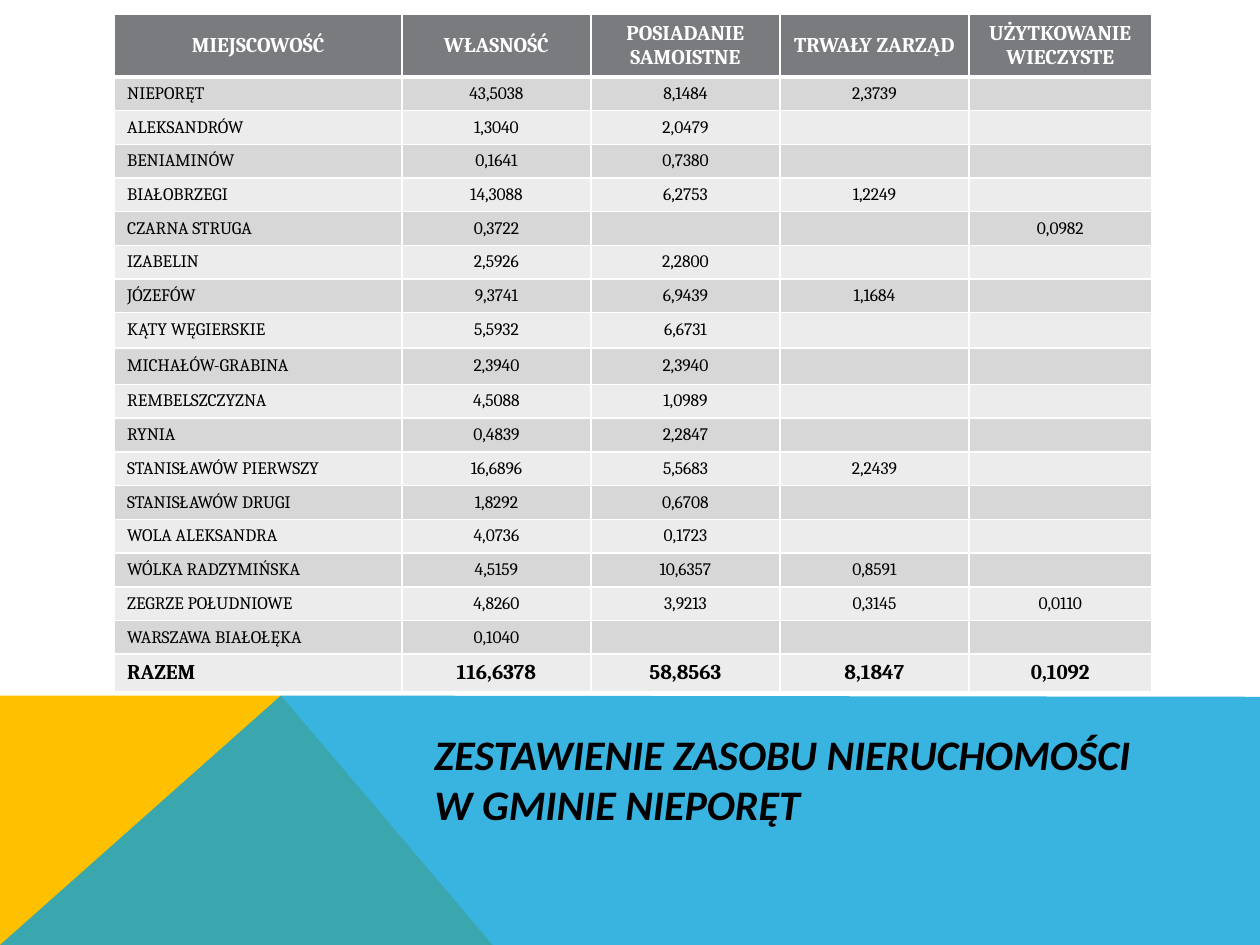
"""Build a slide with a land table above a coloured title band."""
from typing import NamedTuple

from lxml import etree
from pptx import Presentation
from pptx import util as u
from pptx.dml import color
from pptx.enum import text
from pptx.oxml import ns

BLACK = color.RGBColor(0x00, 0x00, 0x00)
WHITE = color.RGBColor(0xFF, 0xFF, 0xFF)
SLATE = color.RGBColor(0x79, 0x7B, 0x7E)
DARK = color.RGBColor(0xD7, 0xD7, 0xD8)
LIGHT = color.RGBColor(0xEC, 0xEC, 0xEC)
GOLD = color.RGBColor(0xFF, 0xC0, 0x00)
BLUE = color.RGBColor(0x08, 0xA1, 0xD9)

WIDTHS = (2.28, 1.5, 1.5, 1.5, 1.45)
HEIGHT = 0.26
TALL = {0: 0.48, 8: 0.28, 9: 0.29, 13: 0.27, 18: 0.28}
ROWS = (
    ("MIEJSCOWOŚĆ", "WŁASNOŚĆ", "POSIADANIE SAMOISTNE", "TRWAŁY ZARZĄD", "UŻYTKOWANIE WIECZYSTE"),
    ("NIEPORĘT", "43,5038", "8,1484", "2,3739", ""),
    ("ALEKSANDRÓW", "1,3040", "2,0479", "", ""),
    ("BENIAMINÓW", "0,1641", "0,7380", "", ""),
    ("BIAŁOBRZEGI", "14,3088", "6,2753", "1,2249", ""),
    ("CZARNA STRUGA", "0,3722", "", "", "0,0982"),
    ("IZABELIN", "2,5926", "2,2800", "", ""),
    ("JÓZEFÓW", "9,3741", "6,9439", "1,1684", ""),
    ("KĄTY WĘGIERSKIE", "5,5932", "6,6731", "", ""),
    ("MICHAŁÓW-GRABINA", "2,3940", "2,3940", "", ""),
    ("REMBELSZCZYZNA", "4,5088", "1,0989", "", ""),
    ("RYNIA", "0,4839", "2,2847", "", ""),
    ("STANISŁAWÓW PIERWSZY", "16,6896", "5,5683", "2,2439", ""),
    ("STANISŁAWÓW DRUGI", "1,8292", "0,6708", "", ""),
    ("WOLA ALEKSANDRA", "4,0736", "0,1723", "", ""),
    ("WÓLKA RADZYMIŃSKA", "4,5159", "10,6357", "0,8591", ""),
    ("ZEGRZE POŁUDNIOWE", "4,8260", "3,9213", "0,3145", "0,0110"),
    ("WARSZAWA BIAŁOŁĘKA", "0,1040", "", "", ""),
    ("RAZEM", "116,6378", "58,8563", "8,1847", "0,1092"),
)


class Band(NamedTuple):
    points: tuple
    fill: color.RGBColor
    alpha: int


class Look(NamedTuple):
    fill: color.RGBColor
    font: dict
    top: int
    base: int


BANDS = (
    Band(((0, 7.5), (0, 5.52), (2.23, 5.52), (3.91, 7.5)), GOLD, 100),
    Band(((0, 7.5), (2.23, 5.52), (10, 5.53), (10, 7.5)), BLUE, 80),
)


def style(font, form: dict, tint: color.RGBColor) -> None:
    for key, value in form.items():
        setattr(font, key, value)
    font.color.rgb = tint


def draw_band(slide, band: Band) -> None:
    first, *rest = [(u.Inches(x), u.Inches(y)) for x, y in band.points]
    pen = slide.shapes.build_freeform(*first)
    pen.add_line_segments(rest)
    shape = pen.convert_to_shape()
    shape.shadow.inherit = False
    shape.fill.solid()
    shape.fill.fore_color.rgb = band.fill
    shape.line.fill.background()
    if band.alpha < 100:
        tint = shape.fill._xPr.find(".//" + ns.qn("a:srgbClr"))
        etree.SubElement(tint, ns.qn("a:alpha"), val=str(band.alpha * 1000))


def draw_edge(cell, side: str, points: int) -> None:
    edge = etree.SubElement(cell._tc.get_or_add_tcPr(), ns.qn("a:ln" + side), w=str(u.Pt(points)))
    fill = etree.SubElement(edge, ns.qn("a:solidFill"))
    etree.SubElement(fill, ns.qn("a:srgbClr"), val=str(WHITE))


def pick_look(row: int) -> Look:
    head, total = row == 0, row == len(ROWS) - 1
    bold = head or total
    font = {"name": "Cambria", "size": u.Pt(12 if bold else 10), "bold": bold}
    fill = SLATE if head else DARK if row % 2 else LIGHT
    return Look(fill, font, 3 if row == 1 else 1, 3 if head else 1)


def fill_cell(cell, words: str, look: Look, left: bool) -> None:
    for side, points in zip("LRTB", (1, 1, look.top, look.base)):
        draw_edge(cell, side, points)
    cell.fill.solid()
    cell.fill.fore_color.rgb = look.fill
    cell.vertical_anchor = text.MSO_ANCHOR.MIDDLE
    para = cell.text_frame.paragraphs[0]
    para.alignment = text.PP_ALIGN.LEFT if left else text.PP_ALIGN.CENTER
    if words:
        run = para.add_run()
        run.text = words
        style(run.font, look.font, WHITE if look.fill == SLATE else BLACK)
    else:
        size = str(int(look.font["size"].pt * 100))
        etree.SubElement(para._p, ns.qn("a:endParaRPr"), sz=size)


def draw_table(slide) -> None:
    tall = [TALL.get(row, HEIGHT) for row in range(len(ROWS))]
    table = slide.shapes.add_table(
        len(ROWS), len(WIDTHS), u.Inches(0.91), u.Inches(0.11),
        u.Inches(sum(WIDTHS)), u.Inches(sum(tall))).table
    for col, width in zip(table.columns, WIDTHS):
        col.width = u.Inches(width)
    for row, (words, height) in enumerate(zip(ROWS, tall)):
        table.rows[row].height = u.Inches(height)
        look = pick_look(row)
        for col, word in enumerate(words):
            fill_cell(table.cell(row, col), word, look, row > 0 and col == 0)


def draw_title(slide) -> None:
    box = slide.shapes.add_textbox(*map(u.Inches, (3.35, 5.88, 5.83, 0.6)))
    frame = box.text_frame
    frame.word_wrap = True
    frame.vertical_anchor = text.MSO_ANCHOR.MIDDLE
    para = frame.paragraphs[0]
    para.text = "ZESTAWIENIE ZASOBU NIERUCHOMOŚCI \vW GMINIE NIEPORĘT"
    form = {"name": "Calibri", "size": u.Pt(24), "bold": True, "italic": True}
    for run in para.runs:
        style(run.font, form, BLACK)


def main() -> None:
    deck = Presentation()
    deck.slide_width, deck.slide_height = u.Inches(10), u.Inches(7.5)
    slide = deck.slides.add_slide(deck.slide_layouts[6])
    for band in BANDS:
        draw_band(slide, band)
    draw_title(slide)
    draw_table(slide)
    deck.save("out.pptx")


if __name__ == "__main__":
    main()
